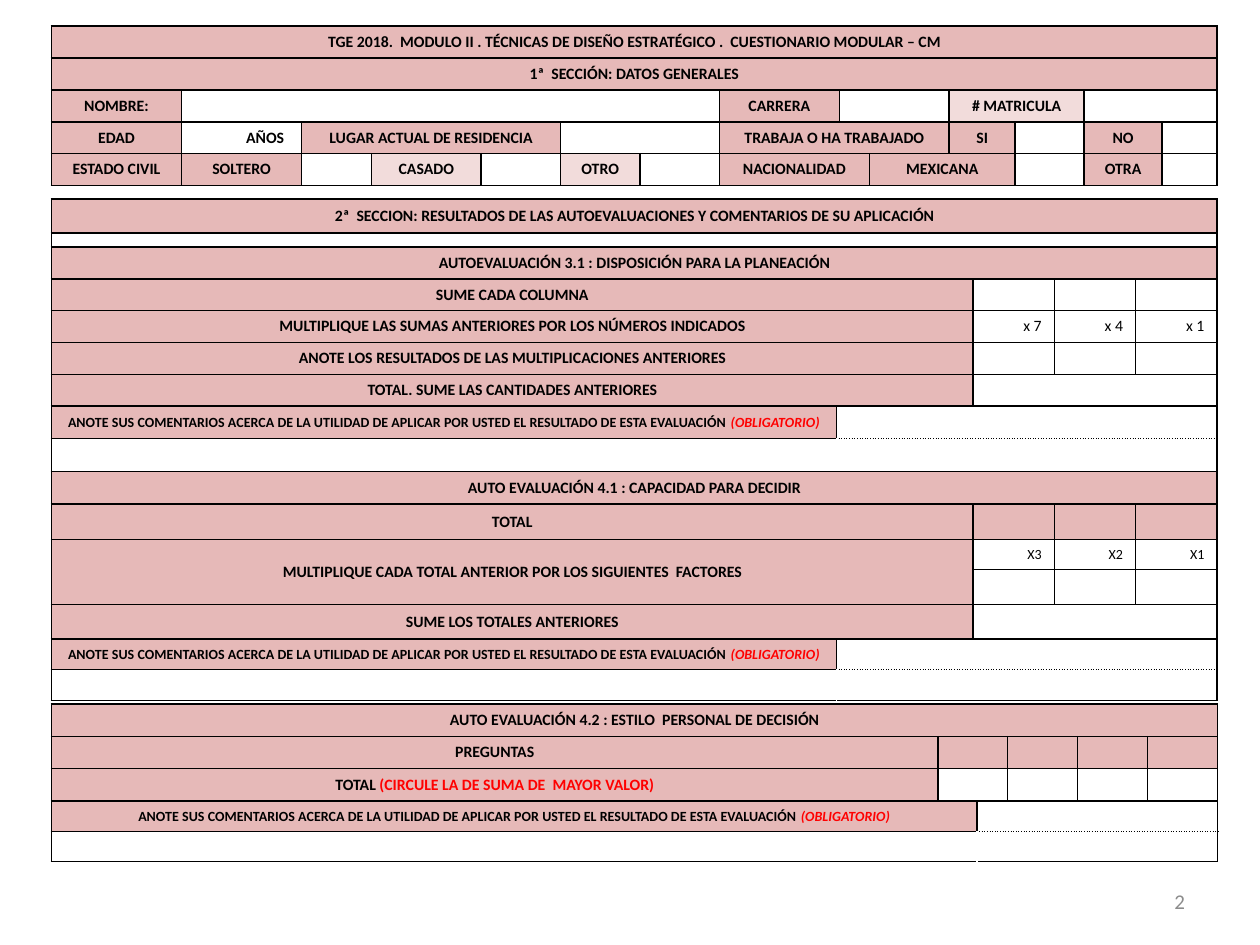
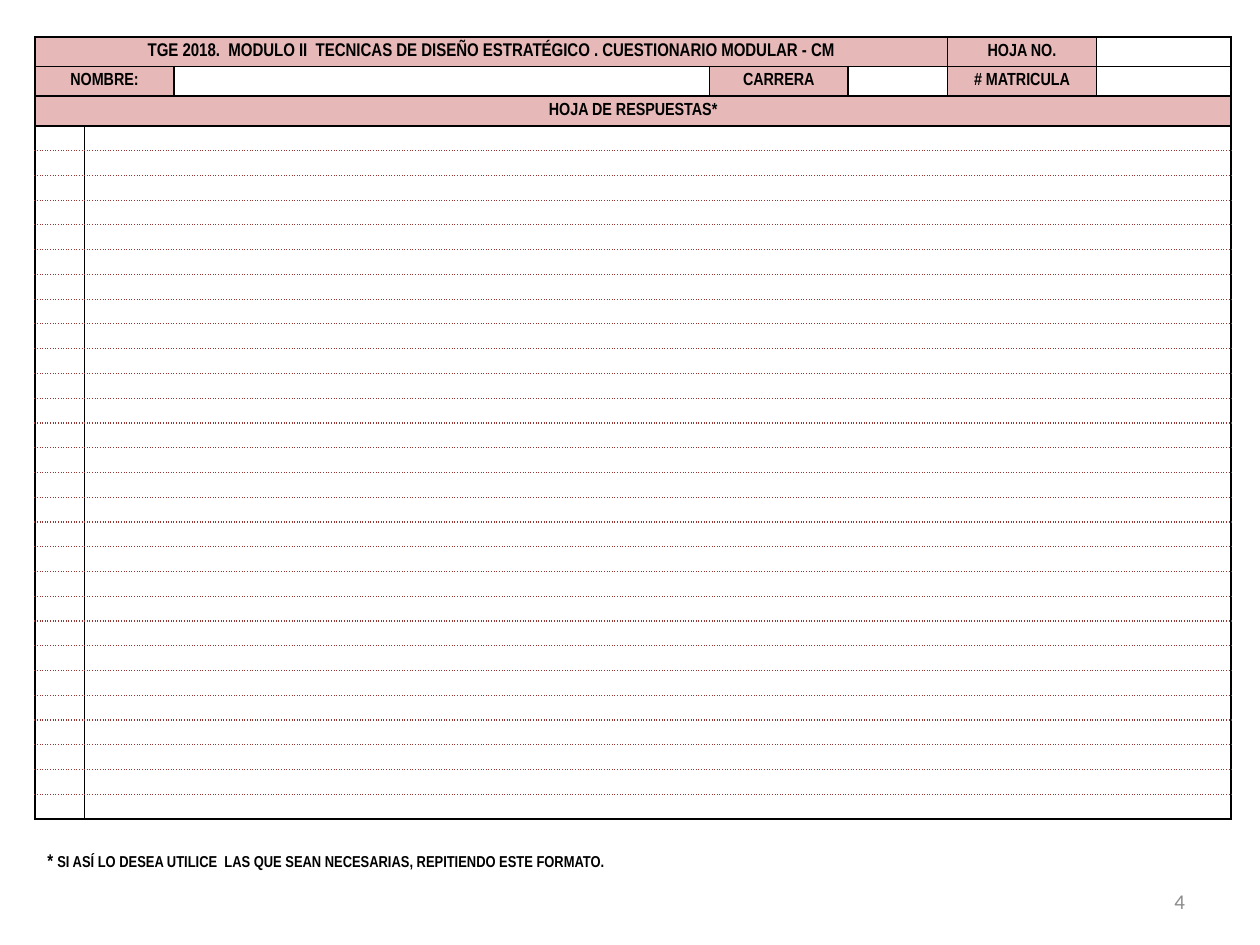
from dataclasses import dataclass, field

from lxml.etree import SubElement
from pptx import Presentation
from pptx.dml.color import RGBColor
from pptx.enum.text import MSO_ANCHOR, PP_ALIGN
from pptx.oxml.ns import qn
from pptx.util import Pt


@dataclass(frozen=True)
class Theme:
    rose: str = "E6B9B8"
    pale: str = "F2DCDB"
    white: str = "FFFFFF"
    black: str = "000000"
    red: str = "FF0000"
    wine: str = "953735"
    gray: str = "8C8C8C"
    form_font: str = "Calibri"
    sheet_font: str = "Arial Narrow"
    empty: float = 4
    small: float = 8
    body: float = 9
    sheet: float = 10
    heading: float = 10.5
    page: float = 12
    no_style: str = "{2D5ABB26-0587-4C30-8999-92F81FD0307C}"


T = Theme()


@dataclass(frozen=True)
class Line:
    color: str = T.black
    width: float = 1
    dash: str = "solid"


SOLID = Line()
THIN = Line(width=0.75)
DOTS = Line(width=0.75, dash="sysDot")
RULE = Line(T.wine, 0.75, "sysDot")
CLEAR = Line(T.white, 0.75)


@dataclass(frozen=True)
class Cell:
    text: str = ""
    span: int = 1
    rows: int = 1
    fill: str = T.white
    size: float = T.body
    bold: bool = True
    align: PP_ALIGN = PP_ALIGN.CENTER
    pad: float = 7.2
    red_text: str = ""
    red_italic: bool = False
    lines: dict[str, Line] = field(default_factory=dict)
    covered: bool = False


@dataclass(frozen=True)
class Grid:
    left: float
    top: float
    cols: list[float]
    heights: list[float]
    rows: list[list[Cell]]
    font: str = T.form_font


def label(text: str, span: int = 1, **kw) -> Cell:
    return Cell(text, span, **{"fill": T.rose, **kw})


def blank(span: int = 1, **kw) -> Cell:
    return Cell(span=span, **kw)


def factors(texts: list[str], size: float) -> list[Cell]:
    return [Cell(t, size=size, bold=False, align=PP_ALIGN.RIGHT) for t in texts]


def comment_rows(span: int, rest: int) -> list[list[Cell]]:
    prompt = label(
        "ANOTE SUS COMENTARIOS ACERCA DE LA UTILIDAD DE APLICAR POR USTED "
        "EL RESULTADO DE ESTA EVALUACIÓN ",
        span, size=T.small, red_text="(OBLIGATORIO)", red_italic=True)
    return [
        [prompt, blank(rest, lines={"B": DOTS})],
        [blank(span, lines={"R": CLEAR, "B": THIN}),
         blank(rest, lines={"L": CLEAR, "T": DOTS, "B": THIN})],
    ]


def add_text(p, text: str, *, size: float = T.body, font: str = T.form_font,
             color: str = T.black, bold: bool = False, italic: bool = False,
             align: PP_ALIGN = PP_ALIGN.LEFT) -> None:
    p.alignment = align
    r = p.add_run()
    r.text = text
    r.font.size = Pt(size)
    r.font.name = font
    r.font.bold = bold
    r.font.italic = italic
    r.font.color.rgb = RGBColor.from_string(color)


def add_box(s, left: float, top: float, width: float, height: float,
            anchor: MSO_ANCHOR):
    tf = s.shapes.add_textbox(Pt(left), Pt(top), Pt(width), Pt(height)).text_frame
    tf.word_wrap = True
    tf.vertical_anchor = anchor
    return tf.paragraphs[0]


def add_page_number(s, number: str) -> None:
    p = add_box(s, 516.25, 500.5, 168, 28.75, MSO_ANCHOR.MIDDLE)
    add_text(p, number, size=T.page, color=T.gray, align=PP_ALIGN.RIGHT)


def draw_edges(tc, lines: dict[str, Line], sides: str) -> None:
    pr = tc._tc.get_or_add_tcPr()
    for side in sides:
        line = lines.get(side, SOLID)
        ln = SubElement(pr, qn(f"a:ln{side}"), w=str(Pt(line.width)))
        solid = SubElement(ln, qn("a:solidFill"))
        SubElement(solid, qn("a:srgbClr"), val=line.color)
        SubElement(ln, qn("a:prstDash"), val=line.dash)


def fill_cell(tc, cell: Cell, font: str) -> None:
    tc.fill.solid()
    tc.fill.fore_color.rgb = RGBColor.from_string(cell.fill)
    tc.vertical_anchor = MSO_ANCHOR.MIDDLE
    tc.margin_left = tc.margin_right = Pt(cell.pad)
    tc.margin_top = tc.margin_bottom = Pt(0)
    p = tc.text_frame.paragraphs[0]
    if not cell.text:
        SubElement(p._p, qn("a:endParaRPr"), sz=str(int(T.empty * 100)))
        return
    fmt = dict(size=cell.size, font=font, bold=cell.bold, align=cell.align)
    add_text(p, cell.text, **fmt)
    if cell.red_text:
        add_text(p, cell.red_text, color=T.red, italic=cell.red_italic, **fmt)


def place_cell(tbl, row: int, col: int, cell: Cell, font: str) -> None:
    last_row, last_col = row + cell.rows - 1, col + cell.span - 1
    for i in range(row, last_row + 1):
        for j in range(col, last_col + 1):
            tc = tbl.cell(i, j)
            sides = "LRTB" if (i, j) == (row, col) else "".join(
                side for side, outer in (
                    ("L", j == col), ("R", j == last_col),
                    ("T", i == row), ("B", i == last_row)) if outer)
            draw_edges(tc, cell.lines, sides)
            fill_cell(tc, cell if (i, j) == (row, col) else Cell(fill=cell.fill), font)
    if cell.span > 1 or cell.rows > 1:
        tbl.cell(row, col).merge(tbl.cell(last_row, last_col))


def add_grid(s, grid: Grid) -> None:
    tbl = s.shapes.add_table(
        len(grid.heights), len(grid.cols), Pt(grid.left), Pt(grid.top),
        Pt(sum(grid.cols)), Pt(sum(grid.heights))).table
    tbl.first_row = tbl.horz_banding = False
    tbl._tbl.tblPr[0].text = T.no_style
    for column, width in zip(tbl.columns, grid.cols):
        column.width = Pt(width)
    for row, height in zip(tbl.rows, grid.heights):
        row.height = Pt(height)
    for i, cells in enumerate(grid.rows):
        col = 0
        for cell in cells:
            if not cell.covered:
                place_cell(tbl, i, col, cell, grid.font)
            col += cell.span


FORM_LEFT = 29.4

GENERAL_DATA = Grid(
    FORM_LEFT, 15,
    [74.3, 68.6, 40, 62.6, 45.4, 45.4, 45.4, 68.6, 17.1, 45.7, 37.7, 39.4, 44.6, 31.4],
    [18.2] * 5,
    [
        [label("TGE 2018.  MODULO II . TÉCNICAS DE DISEÑO ESTRATÉGICO .  "
               "CUESTIONARIO MODULAR – CM", 14)],
        [label("1ª  SECCIÓN: DATOS GENERALES", 14)],
        [label("NOMBRE:"), blank(6), label("CARRERA"), blank(2),
         label("# MATRICULA", 2, fill=T.pale), blank(2)],
        [label("EDAD"), Cell("AÑOS", align=PP_ALIGN.RIGHT, pad=10),
         label("LUGAR ACTUAL DE RESIDENCIA", 3), blank(2),
         label("TRABAJA O HA TRABAJADO", 3), label("SI"), blank(),
         label("NO"), blank()],
        [label("ESTADO CIVIL"), label("SOLTERO"), blank(),
         label("CASADO", fill=T.pale), blank(), label("OTRO", fill=T.pale), blank(),
         label("NACIONALIDAD", 2), label("MEXICANA", 2), blank(),
         label("OTRA"), blank()],
    ])

SELF_ASSESSMENTS = Grid(
    FORM_LEFT, 113.8,
    [448.6, 78] + [46.5] * 3,
    [19.4, 8, 18.3, 18, 18.3, 18.3, 18, 18.6, 18.9, 18.6, 20.2, 17.2, 20, 19.7, 17.4, 17.7],
    [
        [label("2ª  SECCION: RESULTADOS DE LAS AUTOEVALUACIONES Y COMENTARIOS "
               "DE SU APLICACIÓN", 5)],
        [blank(5)],
        [label("AUTOEVALUACIÓN 3.1 : DISPOSICIÓN PARA LA PLANEACIÓN", 5)],
        [label("SUME CADA COLUMNA", 2)] + [blank()] * 3,
        [label("MULTIPLIQUE LAS SUMAS ANTERIORES POR LOS NÚMEROS INDICADOS", 2)]
        + factors(["x 7", "x 4", "x 1"], T.body),
        [label("ANOTE LOS RESULTADOS DE LAS MULTIPLICACIONES ANTERIORES", 2)]
        + [blank()] * 3,
        [label("TOTAL. SUME LAS CANTIDADES ANTERIORES", 2), blank(3)],
        *comment_rows(1, 4),
        [label("AUTO EVALUACIÓN 4.1 : CAPACIDAD PARA DECIDIR", 5)],
        [label("TOTAL", 2)] + [blank(fill=T.rose)] * 3,
        [label("MULTIPLIQUE CADA TOTAL ANTERIOR POR LOS SIGUIENTES  FACTORES", 2, rows=2)]
        + factors(["X3", "X2", "X1"], T.small),
        [blank(2, covered=True)] + [blank()] * 3,
        [label("SUME LOS TOTALES ANTERIORES", 2), blank(3)],
        *comment_rows(1, 4),
    ])

DECISION_STYLE = Grid(
    FORM_LEFT, 402.4,
    [506.6, 22.3, 17.4, 40, 40, 40],
    [18.5, 18.3, 18.6, 17.4, 17.1],
    [
        [label("AUTO EVALUACIÓN 4.2 : ESTILO  PERSONAL DE DECISIÓN", 6)],
        [label("PREGUNTAS"), blank(2, fill=T.rose)] + [blank(fill=T.rose)] * 3,
        [label("TOTAL ", red_text="(CIRCULE LA DE SUMA DE  MAYOR VALOR)"), blank(2)]
        + [blank()] * 3,
        *comment_rows(2, 4),
    ])


def answer_row(index: int, count: int) -> list[Cell]:
    lines = {"T": SOLID if index == 0 else RULE,
             "B": SOLID if index == count - 1 else RULE}
    return [blank(lines=lines), blank(6, lines=lines)]


ANSWER_ROWS = 28
ANSWER_SHEET = Grid(
    20, 21,
    [28.4, 51, 306, 79.2, 56.9, 85, 77.1],
    [17] * 3 + [14.17] * ANSWER_ROWS,
    [
        [label("TGE 2018.  MODULO II  TECNICAS DE DISEÑO ESTRATÉGICO . "
               "CUESTIONARIO MODULAR - CM", 5, size=T.heading),
         label("HOJA NO.", size=T.sheet), blank()],
        [label("NOMBRE:", 2, size=T.sheet), blank(),
         label("CARRERA", size=T.sheet), blank(),
         label("# MATRICULA", size=T.sheet), blank()],
        [label("HOJA DE RESPUESTAS*", 7, size=T.sheet)],
        *[answer_row(i, ANSWER_ROWS) for i in range(ANSWER_ROWS)],
    ],
    T.sheet_font)


def add_footnote(s) -> None:
    p = add_box(s, 20, 481.7, 669, 21, MSO_ANCHOR.TOP)
    add_text(p, "* ", size=T.heading, font=T.sheet_font, bold=True)
    add_text(p, "SI ASÍ LO DESEA UTILICE  LAS QUE SEAN NECESARIAS, "
             "REPITIENDO ESTE FORMATO.", font=T.sheet_font, bold=True)


def main() -> None:
    prs = Presentation()
    prs.slide_width, prs.slide_height = Pt(720), Pt(540)
    pages = [("2", [SELF_ASSESSMENTS, GENERAL_DATA, DECISION_STYLE]),
             ("4", [ANSWER_SHEET])]
    for number, grids in pages:
        s = prs.slides.add_slide(prs.slide_layouts[6])
        add_page_number(s, number)
        for grid in grids:
            add_grid(s, grid)
    add_footnote(s)
    prs.save("out.pptx")


if __name__ == "__main__":
    main()
